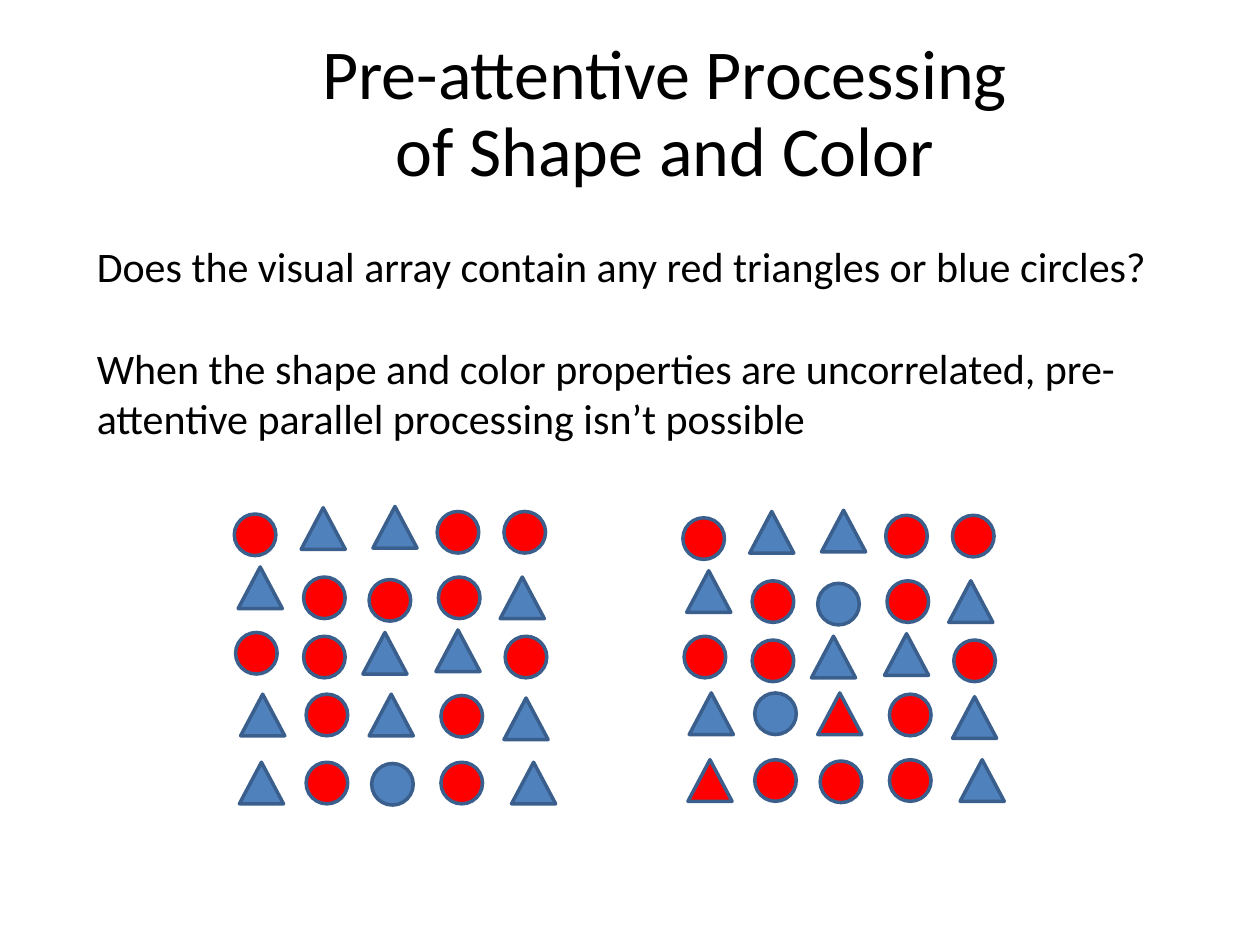
import pptx
import pptx.util
import pptx.dml.color
import pptx.enum.shapes
import pptx.enum.text

Inches, Pt = pptx.util.Inches, pptx.util.Pt
RGB = pptx.dml.color.RGBColor.from_string
SHAPES = pptx.enum.shapes.MSO_SHAPE
TEXT = pptx.enum.text

# Content
TITLE_LINES = ["Pre-attentive Processing", "of Shape and Color"]
STATEMENTS = [
    "Does the visual array contain any red triangles or blue circles?",
    "When the shape and color properties are uncorrelated, "
    "pre-attentive parallel processing isn’t possible",
]
# R/B: red or blue circle, r/b: red or blue triangle
ARRAYS = [
    ["RbbRR", "bRRRb", "RRbbR", "bRbRb", "bRBRb"],
    ["RbbRR", "bRBRb", "RRbbR", "bBrRb", "rRRRb"],
]
# Scatter of each item around its grid point, in hundredths of an inch
SCATTER = [
    [(-1, 3), (-1, -2), (3, -3), (1, 1), (1, 1)],
    [(2, -5), (1, 3), (0, 5), (2, 3), (-2, 3)],
    [(0, -3), (1, 0), (-5, -3), (0, -5), (2, 0)],
    [(4, -4), (3, -4), (0, -4), (4, -3), (1, -1)],
    [(3, 0), (3, 0), (2, 1), (4, 0), (7, 0)],
]
ROW_SHIFTS = [[0, 0, 0, 0, 0], [0.03, 0.03, 0.03, -0.01, -0.02]]

# Theme and grid
THEME = {
    "font": "Calibri", "title": 40, "body": 24, "outline": 2,
    "text": "000000", "r": "FF0000", "b": "4F81BD", "line": "3A5F8C",
}
GRID_LEFT, GRID_TOP = 1.87, 4.05
COLUMN, ROW, ARRAY_STEP = 0.53, 0.5, 3.56
CIRCLE, TRIANGLE = (0.33, 0.33), (0.35, 0.33)


def add_text(paragraph, text, size):
    run = paragraph.add_run()
    run.text = text
    run.font.name = THEME["font"]
    run.font.size = Pt(THEME[size])
    run.font.color.rgb = RGB(THEME["text"])


def add_item(array, code, left, top):
    is_circle = code.isupper()
    width, height = CIRCLE if is_circle else TRIANGLE
    kind = SHAPES.OVAL if is_circle else SHAPES.ISOSCELES_TRIANGLE
    item = array.shapes.add_shape(
        kind, Inches(left), Inches(top), Inches(width), Inches(height))
    item.shadow.inherit = False
    item.fill.solid()
    item.fill.fore_color.rgb = RGB(THEME[code.lower()])
    item.line.color.rgb = RGB(THEME["line"])
    item.line.width = Pt(THEME["outline"])


def main():
    deck = pptx.Presentation()
    deck.slide_width, deck.slide_height = Inches(10), Inches(7.5)
    slide = deck.slides.add_slide(deck.slide_layouts[5])

    # Title
    title = slide.shapes.title
    title.left, title.top = Inches(2.42), Inches(0.25)
    title.width, title.height = Inches(5.71), Inches(1.34)
    title.text_frame.word_wrap = False
    title.text_frame.auto_size = TEXT.MSO_AUTO_SIZE.NONE
    title.text_frame.vertical_anchor = TEXT.MSO_ANCHOR.TOP
    heading = title.text_frame.paragraphs[0]
    heading.alignment = TEXT.PP_ALIGN.CENTER
    heading.line_spacing = 0.92
    for number, line in enumerate(TITLE_LINES):
        if number:
            heading.add_line_break()
        add_text(heading, line, "title")

    # Statements, one line apart
    body = slide.shapes.add_textbox(
        Inches(0.67), Inches(1.86), Inches(8.86), Inches(1.72)).text_frame
    body.word_wrap = True
    for number, statement in enumerate(STATEMENTS):
        paragraph = body.add_paragraph() if number else body.paragraphs[0]
        if number:
            paragraph.space_before = Pt(THEME["body"] * 1.22)
        add_text(paragraph, statement, "body")

    # Visual arrays
    for index, (rows, shifts) in enumerate(zip(ARRAYS, ROW_SHIFTS)):
        array = slide.shapes.add_group_shape()
        for r, codes in enumerate(rows):
            for c, code in enumerate(codes):
                dx, dy = SCATTER[r][c]
                add_item(array, code,
                         GRID_LEFT + index * ARRAY_STEP + c * COLUMN + dx / 100,
                         GRID_TOP + r * ROW + shifts[r] + dy / 100)

    deck.save("out.pptx")


if __name__ == "__main__":
    main()
